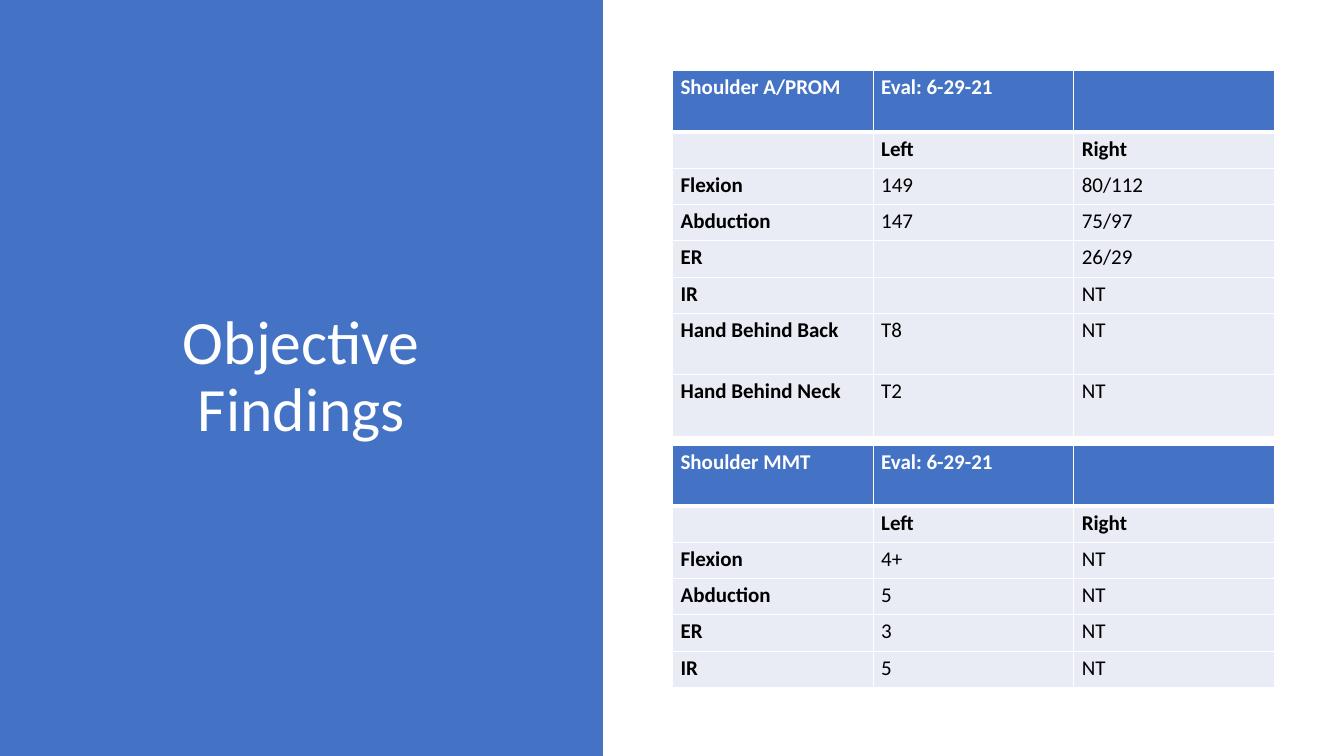
"""Build the Objective Findings slide with two shoulder assessment tables."""
from dataclasses import dataclass

from lxml import etree
from pptx import Presentation
from pptx.dml.color import RGBColor
from pptx.enum.shapes import MSO_SHAPE
from pptx.enum.text import MSO_ANCHOR, PP_ALIGN
from pptx.oxml.ns import qn
from pptx.slide import Slide
from pptx.table import _Cell
from pptx.util import Emu, Pt

RECTANGLE = MSO_SHAPE.RECTANGLE
MIDDLE = MSO_ANCHOR.MIDDLE
CENTER = PP_ALIGN.CENTER
TITLE_ONLY_LAYOUT = 5

BLUE = RGBColor(0x44, 0x72, 0xC4)
PALE_BLUE = RGBColor(0xE9, 0xEB, 0xF5)
WHITE = RGBColor(0xFF, 0xFF, 0xFF)
BLACK = RGBColor(0x00, 0x00, 0x00)

FONT_NAME = "Calibri"
TITLE_SIZE = Pt(44)
CELL_SIZE = Pt(15)
THIN_BORDER = Pt(1)
HEADER_BORDER = Pt(3)

EMU_PER_PX = 9144
TABLE_LEFT = 667
COLUMN_WIDTH = 199
ROW_HEIGHT = 36


@dataclass(frozen=True)
class FindingsTable:
    """Hold one table's top edge, rows of text and taller row heights."""

    top: int
    rows: list[tuple[str, str, str]]
    tall_rows: dict[int, int]


TABLES = [
    FindingsTable(
        top=70,
        rows=[
            ("Shoulder A/PROM", "Eval: 6-29-21", ""),
            ("", "Left", "Right"),
            ("Flexion", "149", "80/112"),
            ("Abduction", "147", "75/97"),
            ("ER", "", "26/29"),
            ("IR", "", "NT"),
            ("Hand Behind Back", "T8", "NT"),
            ("Hand Behind Neck", "T2", "NT"),
        ],
        tall_rows={0: 61, 6: 61, 7: 61},
    ),
    FindingsTable(
        top=442,
        rows=[
            ("Shoulder MMT", "Eval: 6-29-21", ""),
            ("", "Left", "Right"),
            ("Flexion", "4+", "NT"),
            ("Abduction", "5", "NT"),
            ("ER", "3", "NT"),
            ("IR", "5", "NT"),
        ],
        tall_rows={0: 60},
    ),
]


def px(length: int) -> Emu:
    """Convert whole pixels to EMU."""
    return Emu(length * EMU_PER_PX)


def set_attributes(target: object, values: dict[str, object]) -> None:
    """Set every named value on the target."""
    for name, value in values.items():
        setattr(target, name, value)


def add_title(slide: Slide, text: str) -> None:
    """Place the title over a blue panel on the left."""
    title = slide.shapes.title
    panel = slide.shapes.add_shape(RECTANGLE, 0, 0, px(598), px(750))
    panel.shadow.inherit = False
    panel.fill.solid()
    panel.fill.fore_color.rgb = BLUE
    panel.line.fill.background()
    title._element.addprevious(panel._element)

    box = {"left": px(68), "top": px(70), "width": px(462), "height": px(610)}
    set_attributes(title, box)
    title.text = text
    set_attributes(title.text_frame, {"vertical_anchor": MIDDLE, "word_wrap": True})
    paragraph = title.text_frame.paragraphs[0]
    set_attributes(paragraph, {"alignment": CENTER, "line_spacing": 0.9})
    font = paragraph.runs[0].font
    set_attributes(font, {"name": FONT_NAME, "size": TITLE_SIZE})
    font.color.rgb = WHITE


def add_borders(cell: _Cell, top: int, bottom: int) -> None:
    """Draw white borders around a cell."""
    properties = cell._tc.get_or_add_tcPr()
    widths = {"a:lnL": THIN_BORDER, "a:lnR": THIN_BORDER, "a:lnT": top, "a:lnB": bottom}
    for tag, width in widths.items():
        line = etree.SubElement(properties, qn(tag), w=str(int(width)))
        fill = etree.SubElement(line, qn("a:solidFill"))
        etree.SubElement(fill, qn("a:srgbClr"), val=str(WHITE))


def format_cell(cell: _Cell, text: str, row: int, column: int) -> None:
    """Fill one cell with its text, colours and borders."""
    add_borders(
        cell,
        top=HEADER_BORDER if row == 1 else THIN_BORDER,
        bottom=HEADER_BORDER if row == 0 else THIN_BORDER,
    )
    cell.fill.solid()
    cell.fill.fore_color.rgb = BLUE if row == 0 else PALE_BLUE
    margins = {"margin_left": px(8), "margin_right": px(8), "margin_top": px(4), "margin_bottom": px(4)}
    set_attributes(cell, margins)
    paragraph = cell.text_frame.paragraphs[0]
    if not text:
        paragraph._p.get_or_add_endParaRPr().set("sz", str(int(CELL_SIZE.pt * 100)))
        return
    run = paragraph.add_run()
    run.text = text
    bold = row < 2 or column == 0
    set_attributes(run.font, {"name": FONT_NAME, "size": CELL_SIZE, "bold": bold})
    run.font.color.rgb = WHITE if row == 0 else BLACK


def add_findings_table(slide: Slide, findings: FindingsTable) -> None:
    """Add one findings table to the slide."""
    column_count = len(findings.rows[0])
    heights = [findings.tall_rows.get(row, ROW_HEIGHT) for row in range(len(findings.rows))]
    table = slide.shapes.add_table(
        len(heights),
        column_count,
        px(TABLE_LEFT),
        px(findings.top),
        px(COLUMN_WIDTH * column_count),
        px(sum(heights)),
    ).table
    table.horz_banding = False
    for column in table.columns:
        column.width = px(COLUMN_WIDTH)
    for row, (height, texts) in enumerate(zip(heights, findings.rows)):
        table.rows[row].height = px(height)
        for column, text in enumerate(texts):
            format_cell(table.cell(row, column), text, row, column)


def main() -> None:
    """Build and save the presentation."""
    presentation = Presentation()
    set_attributes(presentation, {"slide_width": px(1333), "slide_height": px(750)})
    slide = presentation.slides.add_slide(presentation.slide_layouts[TITLE_ONLY_LAYOUT])
    add_title(slide, "Objective Findings")
    for findings in TABLES:
        add_findings_table(slide, findings)
    presentation.save("out.pptx")


if __name__ == "__main__":
    main()
